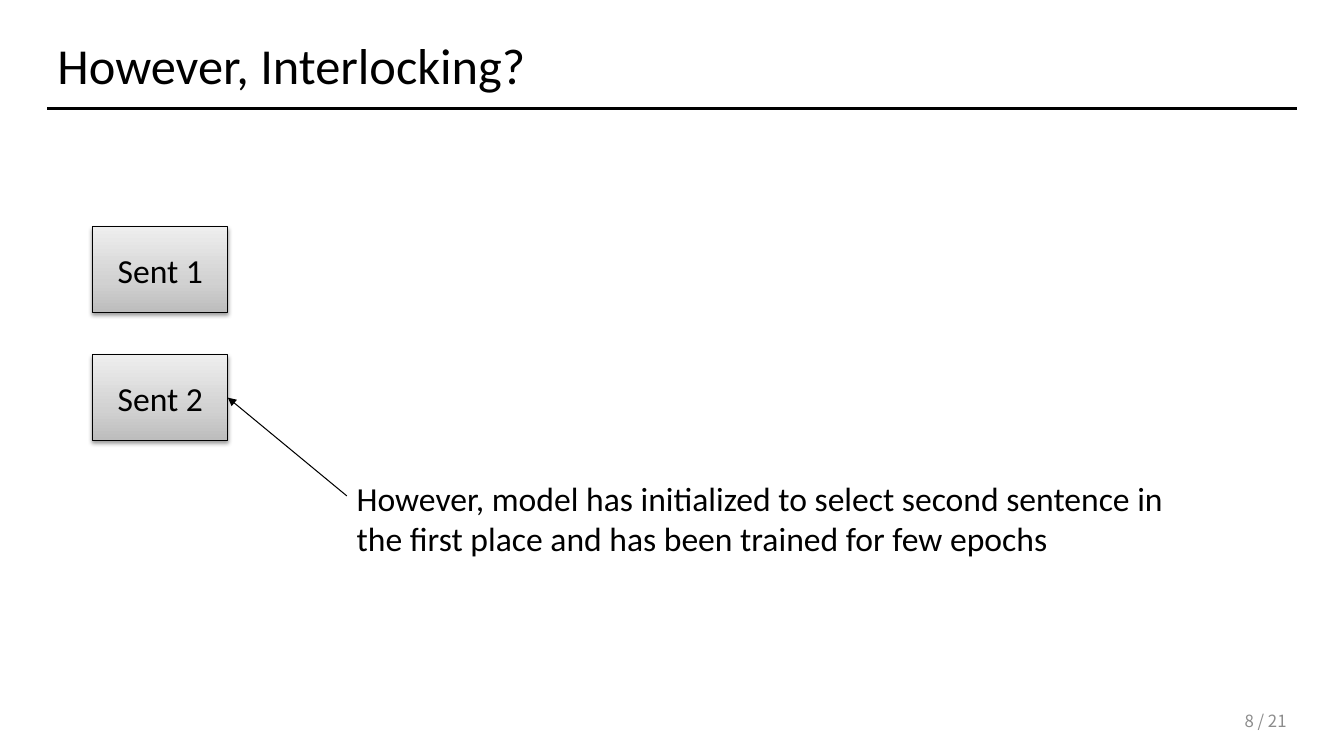
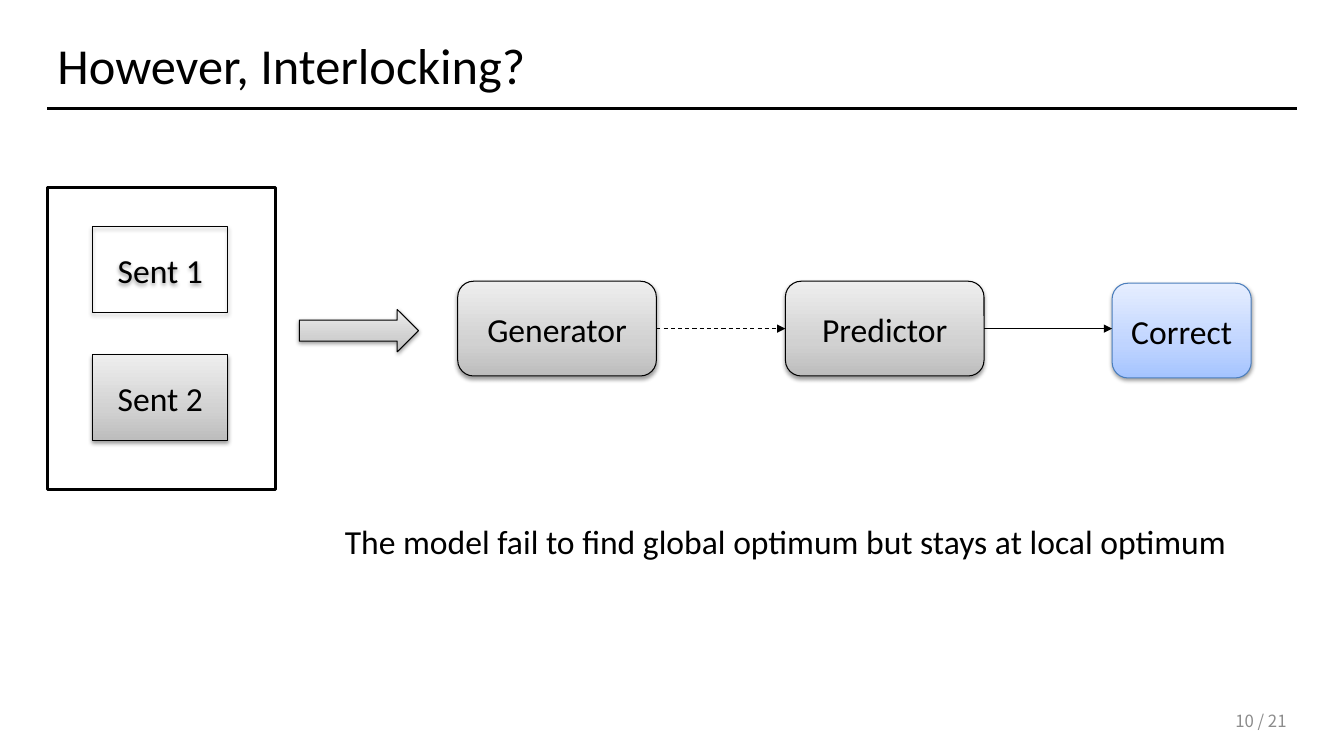
import pptx
import pptx.dml.color
import pptx.enum.dml
import pptx.enum.shapes
import pptx.enum.text
import pptx.oxml
import pptx.oxml.ns
import pptx.util
from lxml import etree

Inches = pptx.util.Inches
Pt = pptx.util.Pt
SHAPE = pptx.enum.shapes.MSO_SHAPE
ALIGN = pptx.enum.text.PP_ALIGN
ANCHOR = pptx.enum.text.MSO_ANCHOR
DASH = pptx.enum.dml.MSO_LINE.DASH
qn = pptx.oxml.ns.qn

# Shared look
FONT = "Calibri"
BLACK = "000000"
MUTED = "8C8C8C"
EDGE = "4B7EBC"
GRAY = ("BDBDBD", "D1D1D1", "EEEEEE")
BLUE = ("A4C4FF", "BFD4FF", "E6EEFF")
STOPS = (0, 35, 100)
LEFT, WIDE = 0.47, 12.39
TOTAL = 21


def color(code):
    return pptx.dml.color.RGBColor.from_string(code)


def write(frame, text, size=24, font=FONT, ink=BLACK, align=ALIGN.LEFT,
          anchor=ANCHOR.TOP):
    frame.word_wrap = True
    frame.auto_size = pptx.enum.text.MSO_AUTO_SIZE.NONE
    frame.vertical_anchor = anchor
    para = frame.paragraphs[0]
    para.alignment = align
    run = para.add_run()
    run.text = text
    run.font.size = Pt(size)
    run.font.name = font
    run.font.color.rgb = color(ink)


def label(slide, text, x, y, w, h, **style):
    box = slide.shapes.add_textbox(Inches(x), Inches(y), Inches(w), Inches(h))
    write(box.text_frame, text, **style)


def stroke(line, ink, width, dash=None):
    line.color.rgb = color(ink)
    line.width = Pt(width)
    if dash:
        line.dash_style = dash


# Shape effects
def shade(shape, tones):
    """Fill with tones that run from bottom to top."""
    shape.fill.gradient()
    grad = shape.fill._xPr.find(qn("a:gradFill"))
    stops = grad.find(qn("a:gsLst"))
    for stop in list(stops):
        stops.remove(stop)
    for place, tone in zip(STOPS, tones):
        stop = etree.SubElement(stops, qn("a:gs"), pos=str(place * 1000))
        etree.SubElement(stop, qn("a:srgbClr"), val=tone)
    lin = grad.find(qn("a:lin"))
    lin.set("ang", str(270 * 60000))
    lin.set("scaled", "0")


def shadow(shape):
    shape.shadow.inherit = False
    effects = shape._element.spPr.find(qn("a:effectLst"))
    outer = etree.SubElement(
        effects, qn("a:outerShdw"), blurRad=str(Pt(3.1)), dist=str(Pt(1.6)),
        dir=str(90 * 60000), rotWithShape="0")
    tint = etree.SubElement(outer, qn("a:srgbClr"), val=BLACK)
    etree.SubElement(tint, qn("a:alpha"), val="38000")


# Element kinds
def block(slide, kind, x, y, w, h, text="", tones=None, ink=BLACK,
          width=0.75, cast=True):
    shape = slide.shapes.add_shape(
        kind, Inches(x), Inches(y), Inches(w), Inches(h))
    if tones:
        shade(shape, tones)
    else:
        shape.fill.background()
    stroke(shape.line, ink, width)
    if cast:
        shadow(shape)
    else:
        shape.shadow.inherit = False
    if text:
        write(shape.text_frame, text, align=ALIGN.CENTER, anchor=ANCHOR.MIDDLE)
    return shape


def rule(slide, x1, y1, x2, y2, width=0.75, dash=None):
    line = slide.shapes.add_connector(
        pptx.enum.shapes.MSO_CONNECTOR.STRAIGHT,
        Inches(x1), Inches(y1), Inches(x2), Inches(y2))
    stroke(line.line, BLACK, width, dash)
    etree.SubElement(line._element.spPr, qn("a:effectLst"))
    return line


def arrow(slide, x1, y1, x2, y2, source=None, target=None, dash=None):
    """Join the right side of source to a (shape, site) target."""
    line = rule(slide, x1, y1, x2, y2, dash=dash)
    etree.SubElement(line.line._get_or_add_ln(), qn("a:tailEnd"),
                     type="triangle")
    if source:
        line.begin_connect(source, 3)
    if target:
        line.end_connect(*target)


def pair(slide, first, second):
    """Stack the two sentence boxes and return the lower one."""
    for row, tones in enumerate((first, second)):
        box = block(slide, SHAPE.RECTANGLE, 0.92, 2.25 + row * 1.27,
                    1.34, 0.85, f"Sent {row + 1}", tones)
    return box


def page(deck, title, number):
    slide = deck.slides.add_slide(deck.slide_layouts[5])
    rule(slide, LEFT, 1.08, LEFT + WIDE, 1.08, width=2)
    head = slide.shapes.title
    head.left, head.top = Inches(LEFT), Inches(0.14)
    head.width, head.height = Inches(WIDE), Inches(0.85)
    write(head.text_frame, title, size=36, anchor=ANCHOR.BOTTOM)
    label(slide, f"{number} / {TOTAL}", 9.75, 6.95, 3.11, 0.4, size=12,
          font="Noto Sans CJK KR", ink=MUTED, align=ALIGN.RIGHT,
          anchor=ANCHOR.MIDDLE)
    return slide


# Slides
def start(deck):
    slide = page(deck, "However, Interlocking?", 8)
    lower = pair(slide, GRAY, GRAY)
    arrow(slide, 3.44, 4.92, 2.26, 3.95, target=(lower, 3))
    label(slide, "However, model has initialized to select second sentence in "
          "the first place and has been trained for few epochs",
          3.44, 4.69, 8.43, 0.91)


def result(deck):
    slide = page(deck, "However, Interlocking?", 10)
    pair(slide, None, GRAY)
    block(slide, SHAPE.RECTANGLE, LEFT, 1.86, 2.26, 3, width=2, cast=False)
    block(slide, SHAPE.RIGHT_ARROW, 2.97, 3.07, 1.18, 0.42, tones=GRAY)

    # Model chain
    maker, judge = [
        block(slide, SHAPE.ROUNDED_RECTANGLE, 4.54 + step * 3.25, 2.79,
              1.97, 0.94, name, GRAY)
        for step, name in enumerate(("Generator", "Predictor"))]
    block(slide, SHAPE.ROUNDED_RECTANGLE, 11.03, 2.81, 1.38, 0.94,
          "Correct", BLUE, ink=EDGE)
    arrow(slide, 6.51, 3.26, 7.79, 3.26, maker, (judge, 1), DASH)
    arrow(slide, 9.76, 3.26, 11.03, 3.26, judge)

    label(slide,
          "The model fail to find global optimum but stays at local optimum",
          3.26, 5.12, 9.06, 0.5, align=ALIGN.CENTER)


def main():
    deck = pptx.Presentation()
    deck.slide_width, deck.slide_height = Inches(13.33), Inches(7.5)
    start(deck)
    result(deck)
    deck.save("out.pptx")


if __name__ == "__main__":
    main()
